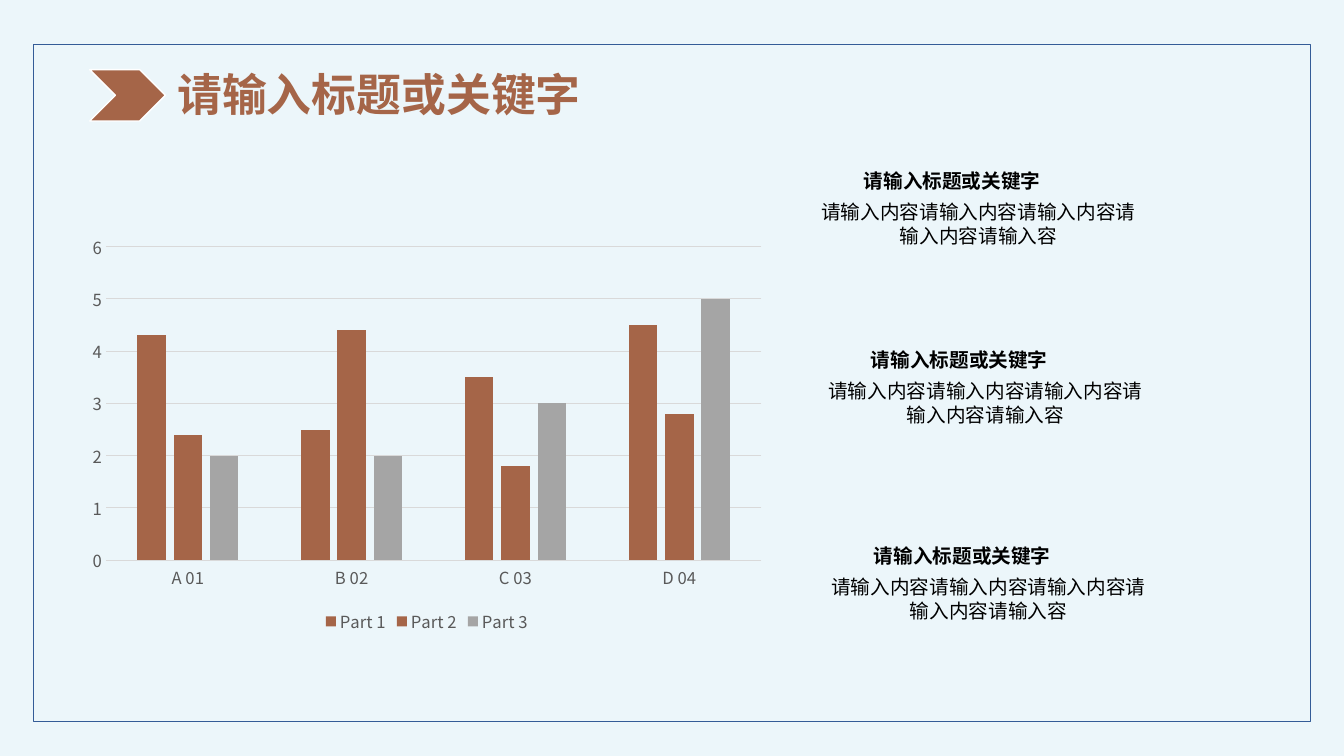
from lxml import etree
from pptx import Presentation
from pptx.chart.data import CategoryChartData
from pptx.dml.color import RGBColor
from pptx.enum.chart import XL_CHART_TYPE, XL_LEGEND_POSITION, XL_TICK_MARK
from pptx.enum.shapes import MSO_SHAPE
from pptx.enum.text import MSO_AUTO_SIZE, PP_ALIGN
from pptx.oxml.ns import qn
from pptx.util import Inches, Pt

COLUMN_CLUSTERED = XL_CHART_TYPE.COLUMN_CLUSTERED
LEGEND_BOTTOM = XL_LEGEND_POSITION.BOTTOM
NO_TICK = XL_TICK_MARK.NONE
RECTANGLE, CHEVRON = MSO_SHAPE.RECTANGLE, MSO_SHAPE.CHEVRON
CENTER, JUSTIFY = PP_ALIGN.CENTER, PP_ALIGN.JUSTIFY
GROW = MSO_AUTO_SIZE.SHAPE_TO_FIT_TEXT

FONT = "Noto Sans CJK SC"
WHITE = RGBColor(0xFF, 0xFF, 0xFF)
BLACK = RGBColor(0x00, 0x00, 0x00)
NAVY = RGBColor(0x32, 0x54, 0x91)
SKY = RGBColor(0x46, 0xA8, 0xD0)
BROWN = RGBColor(0xA5, 0x65, 0x48)
GRAY = RGBColor(0xA5, 0xA5, 0xA5)
LABEL_GRAY = RGBColor(0x59, 0x59, 0x59)
GRID_GRAY = RGBColor(0xD9, 0xD9, 0xD9)

HEADING = "请输入标题或关键字"
BODY = "请输入内容" * 4 + "请输入容"

prs = Presentation()
prs.slide_width, prs.slide_height = Inches(13.33), Inches(7.5)
s = prs.slides.add_slide(prs.slide_layouts[6])


def add_box(preset, x, y, w, h, fill, line=None, opacity=100):
    sp = s.shapes.add_shape(preset, Inches(x), Inches(y), Inches(w), Inches(h))
    sp.shadow.inherit = False
    sp.fill.solid()
    sp.fill.fore_color.rgb = fill
    if opacity < 100:
        color = sp.fill._xPr.find(qn("a:solidFill"))[0]
        etree.SubElement(color, qn("a:alpha")).set("val", str(opacity * 1000))
    if line is None:
        sp.line.fill.background()
    else:
        sp.line.color.rgb = line
        sp.line.width = Pt(1)


def add_text(text, x, y, w, h, size=14, spacing=17, color=BLACK, bold=False,
             align=CENTER, wrap=True):
    tf = s.shapes.add_textbox(Inches(x), Inches(y), Inches(w), Inches(h)).text_frame
    tf.word_wrap = wrap
    tf.auto_size = GROW
    p = tf.paragraphs[0]
    p.alignment = align
    p.line_spacing = Pt(spacing)
    r = p.add_run()
    r.text = text
    r.font.size = Pt(size)
    r.font.bold = bold
    r.font.color.rgb = color
    r.font.name = FONT
    etree.SubElement(r.font._element, qn("a:ea")).set("typeface", FONT)


# Background frame and tint
add_box(RECTANGLE, 0.33, 0.44, 12.67, 6.72, WHITE, line=NAVY, opacity=92)
add_box(RECTANGLE, 0, 0, 13.4, 7.5, SKY, opacity=10)

# Column chart
data = CategoryChartData()
data.categories = ["A 01", "B 02", "C 03", "D 04"]
data.add_series("Part 1", (4.3, 2.5, 3.5, 4.5))
data.add_series("Part 2", (2.4, 4.4, 1.8, 2.8))
data.add_series("Part 3", (2, 2, 3, 5))
chart = s.shapes.add_chart(COLUMN_CLUSTERED, Inches(0.78), Inches(2.24),
                           Inches(6.91), Inches(4.09), data).chart
chart.has_title = False
chart.font.name = FONT
chart.font.size = Pt(11.9)
chart.font.color.rgb = LABEL_GRAY
chart.has_legend = True
chart.legend.position = LEGEND_BOTTOM
chart.legend.include_in_layout = False

plot = chart.plots[0]
plot.gap_width = 219
plot.overlap = -27
plot.vary_by_categories = False
for series, color in zip(plot.series, (BROWN, BROWN, GRAY)):
    series.format.fill.solid()
    series.format.fill.fore_color.rgb = color

cat_axis, val_axis = chart.category_axis, chart.value_axis
for axis in (cat_axis, val_axis):
    axis.major_tick_mark = axis.minor_tick_mark = NO_TICK
val_axis.minimum_scale, val_axis.maximum_scale, val_axis.major_unit = 0, 6, 1
val_axis.format.line.fill.background()
for line in (cat_axis.format.line, val_axis.major_gridlines.format.line):
    line.color.rgb = GRID_GRAY
    line.width = Pt(0.75)

# Headed notes beside the chart
for x, y in ((7.97, 1.62), (8.04, 3.4), (8.07, 5.34)):
    add_text(HEADING, x + 0.49, y, 1.97, 0.34, bold=True, wrap=False)
    add_text(BODY, x, y + 0.31, 3.47, 0.57)

# Slide title
add_box(CHEVRON, 0.89, 0.69, 0.75, 0.51, BROWN, line=WHITE)
add_text(HEADING, 1.66, 0.6, 4.76, 0.64, size=32, spacing=39, color=BROWN,
         bold=True, align=JUSTIFY)

prs.save("out.pptx")
